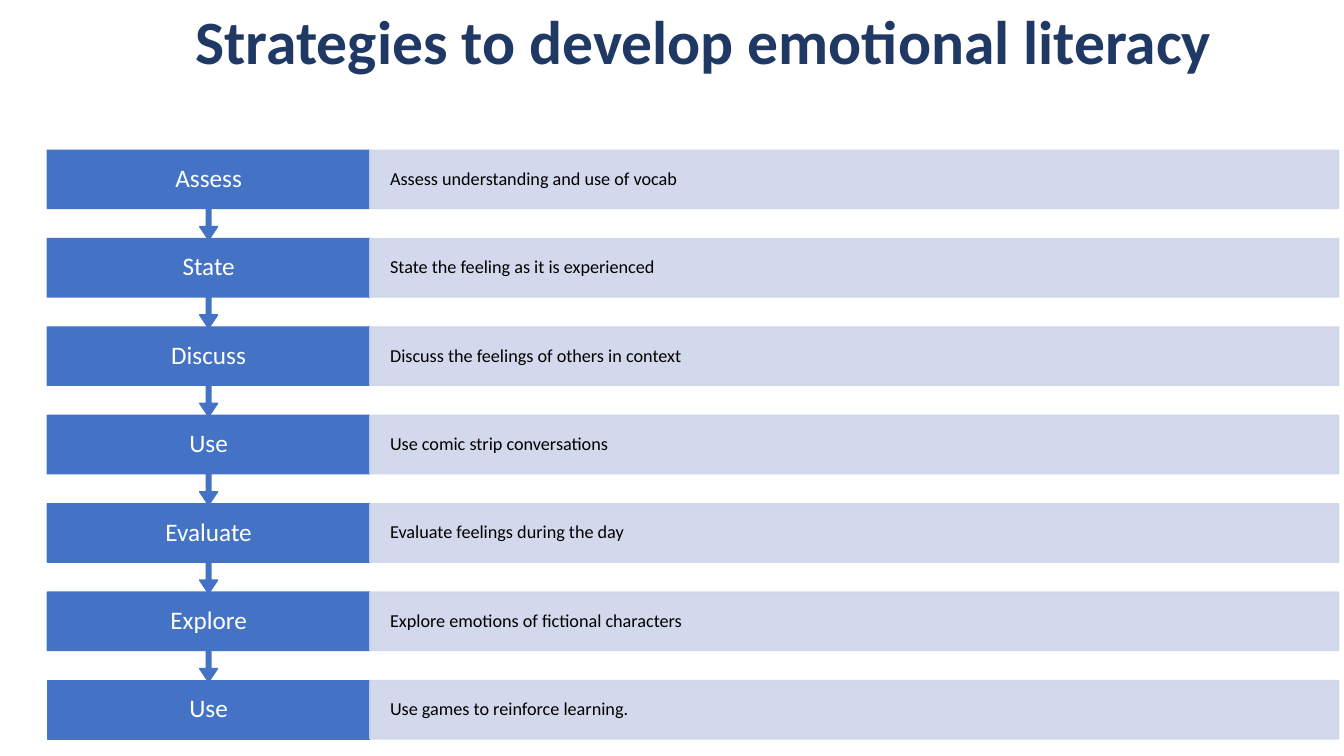
from lxml.etree import SubElement
from pptx import Presentation
from pptx.dml.color import RGBColor
from pptx.enum.shapes import MSO_SHAPE as SHAPE
from pptx.enum.text import MSO_ANCHOR as ANCHOR, PP_ALIGN as ALIGN
from pptx.oxml.ns import qn
from pptx.util import Pt

COLORS = {"title": "203864", "step": "4472C4", "panel": "CFD5EA",
          "light": "FFFFFF", "dark": "000000"}
STEPS = [
    ("Assess", "Assess understanding and use of vocab"),
    ("State", "State the feeling as it is experienced"),
    ("Discuss", "Discuss the feelings of others in context"),
    ("Use", "Use comic strip conversations"),
    ("Evaluate", "Evaluate feelings during the day"),
    ("Explore", "Explore emotions of fictional characters"),
    ("Use", "Use games to reinforce learning."),
]
LEFT, TOP, PITCH = 33.84, 107.3, 63.13
STEP_WIDTH, PANEL_WIDTH = 230.4, 691.92
BOX_HEIGHT, CALLOUT_HEIGHT = 41.7, 64.15
STEP_TEXT = {"size": 18, "color": "light", "align": ALIGN.CENTER, "inset": (16.4, 10.1)}
PANEL_TEXT = {"size": 13, "color": "dark", "align": ALIGN.LEFT, "inset": (14.4, 13)}


def write_text(shape, text, size, color, align, inset, bold=False):
    frame = shape.text_frame
    frame.word_wrap = True
    frame.vertical_anchor = ANCHOR.MIDDLE
    frame.margin_left = frame.margin_right = Pt(inset[0])
    frame.margin_top = frame.margin_bottom = Pt(inset[1])
    paragraph = frame.paragraphs[0]
    paragraph.text = text
    paragraph.alignment = align
    paragraph.line_spacing = 0.9
    formats = {"name": "Calibri", "size": Pt(size), "bold": bold}
    for name, value in formats.items():
        setattr(paragraph.runs[0].font, name, value)
    paragraph.runs[0].font.color.rgb = RGBColor.from_string(COLORS[color])


def add_box(kind, left, top, width, height, color):
    shape = slide.shapes.add_shape(kind, Pt(left), Pt(top), Pt(width), Pt(height))
    shape.shadow.inherit = False
    shape.fill.solid()
    shape.line.width = Pt(1)
    for fill in (shape.fill, shape.line.fill):
        fill.solid()
        fill.fore_color.rgb = RGBColor.from_string(COLORS[color])
    return shape


presentation = Presentation()
presentation.slide_width, presentation.slide_height = Pt(960), Pt(540)
slide = presentation.slides.add_slide(presentation.slide_layouts[5])

# Title
title = slide.shapes.title
title.left, title.top, title.width, title.height = Pt(132.5), Pt(-20.2), Pt(828), Pt(104.4)
write_text(title, "Strategies to develop emotional literacy", 44, "title",
           ALIGN.LEFT, (7.2, 3.6), bold=True)

# Steps from bottom to top, so that each arrow tip lies over the next box
for index, (step, detail) in reversed(list(enumerate(STEPS))):
    top = TOP + index * PITCH
    if index == len(STEPS) - 1:
        box = add_box(SHAPE.RECTANGLE, LEFT, top, STEP_WIDTH, BOX_HEIGHT, "step")
    else:
        box = add_box(SHAPE.DOWN_ARROW_CALLOUT, LEFT, top, STEP_WIDTH, CALLOUT_HEIGHT, "step")
        for number, value in enumerate((0.05, 0.1, 0.15, 0.65)):
            box.adjustments[number] = value
    write_text(box, step, **STEP_TEXT)

    # Panel with slightly transparent fill and line
    panel = add_box(SHAPE.RECTANGLE, LEFT + STEP_WIDTH, top, PANEL_WIDTH, BOX_HEIGHT, "panel")
    for color in panel.element.spPr.iter(qn("a:srgbClr")):
        SubElement(color, qn("a:alpha"), val="90000")
    write_text(panel, detail, **PANEL_TEXT)

presentation.save("out.pptx")
